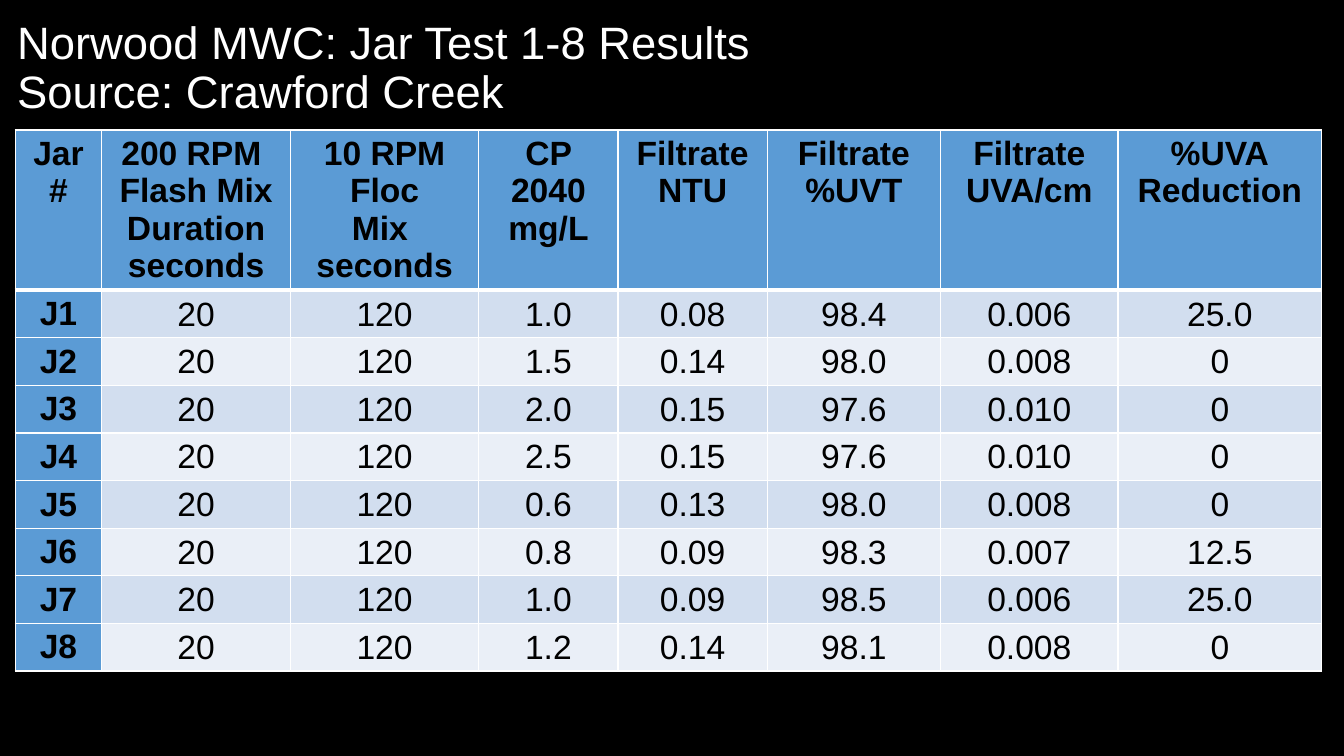
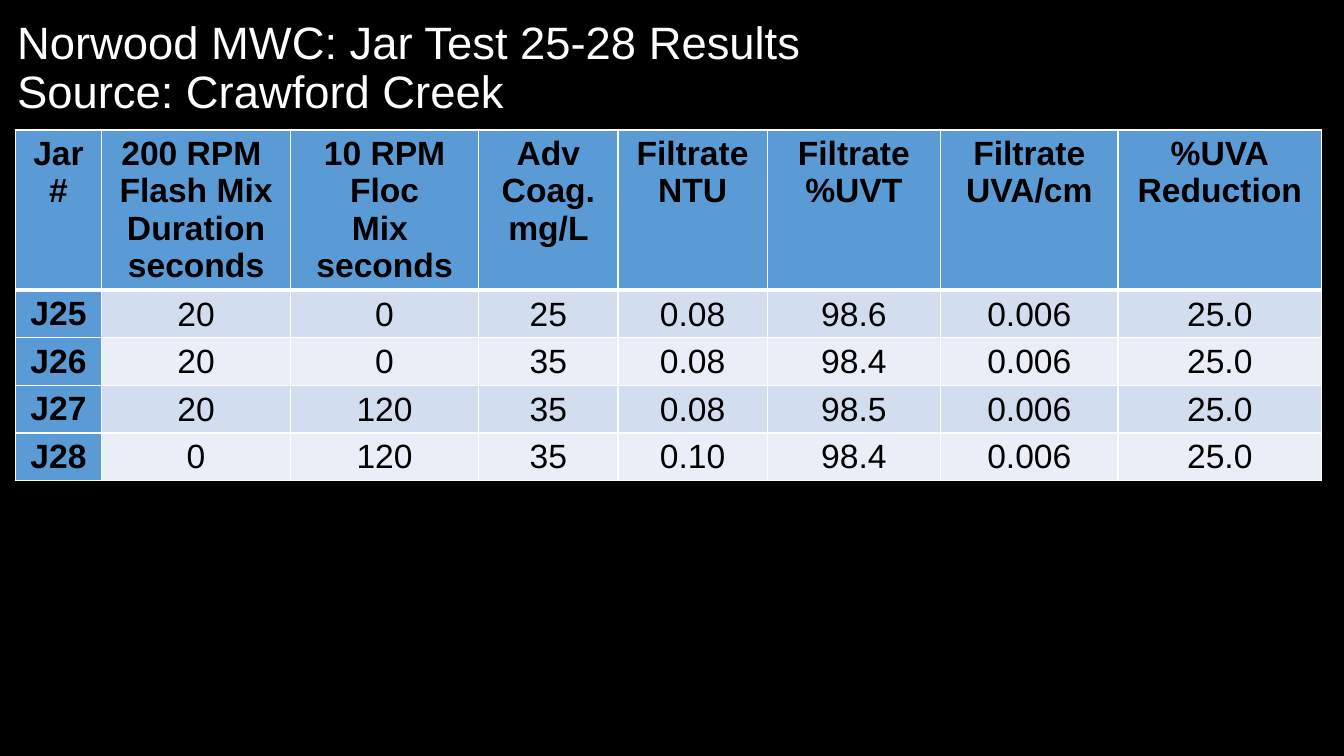
from lxml import etree
from pptx import Presentation
from pptx.dml.color import RGBColor
from pptx.enum.text import MSO_ANCHOR, MSO_AUTO_SIZE, PP_ALIGN
from pptx.oxml.ns import qn
from pptx.util import Inches, Pt

TOP, MIDDLE = MSO_ANCHOR.TOP, MSO_ANCHOR.MIDDLE
LEFT, CENTER = PP_ALIGN.LEFT, PP_ALIGN.CENTER
NO_AUTOFIT = MSO_AUTO_SIZE.NONE

FONT = "Arial"
BLACK, WHITE, BLUE = "000000", "FFFFFF", "5B9BD5"
BANDS = ("D2DEEF", "EAEFF7")
TITLE_BOX = (0.07, 0.12, 13.03, 1.14)
TABLE_AT = (0.15, 1.29)
COL_WIDTHS = (0.86, 1.87, 1.87, 1.38, 1.48, 1.72, 1.76, 2.02)
HEADER_H, ROW_H = 1.59, 0.47
LABEL_MARGINS = (0.1, 0.05, 0.1, 0.05)
VALUE_MARGINS = (0.01, 0.01, 0.01, 0)

SLIDES = [
    ("Norwood MWC: Jar Test 1-8 Results \vSource: Crawford Creek", "CP 2040\nmg/L", [
        ("J1", "20", "120", "1.0", "0.08", "98.4", "0.006", "25.0"),
        ("J2", "20", "120", "1.5", "0.14", "98.0", "0.008", "0"),
        ("J3", "20", "120", "2.0", "0.15", "97.6", "0.010", "0"),
        ("J4", "20", "120", "2.5", "0.15", "97.6", "0.010", "0"),
        ("J5", "20", "120", "0.6", "0.13", "98.0", "0.008", "0"),
        ("J6", "20", "120", "0.8", "0.09", "98.3", "0.007", "12.5"),
        ("J7", "20", "120", "1.0", "0.09", "98.5", "0.006", "25.0"),
        ("J8", "20", "120", "1.2", "0.14", "98.1", "0.008", "0"),
    ]),
    ("Norwood MWC: Jar Test 25-28 Results \vSource: Crawford Creek", "Adv\nCoag.\nmg/L", [
        ("J25", "20", "0", "25", "0.08", "98.6", "0.006", "25.0"),
        ("J26", "20", "0", "35", "0.08", "98.4", "0.006", "25.0"),
        ("J27", "20", "120", "35", "0.08", "98.5", "0.006", "25.0"),
        ("J28", "0", "120", "35", "0.10", "98.4", "0.006", "25.0"),
    ]),
]


def rgb(color):
    """Turn a hex string into a colour."""
    return RGBColor.from_string(color)


def style_font(p, size, color, bold=False):
    """Set the font of a paragraph."""
    p.font.name, p.font.size, p.font.bold = FONT, Pt(size), bold
    p.font.color.rgb = rgb(color)


def add_borders(cell, top, bottom):
    """Draw white cell borders, with the top and bottom widths in points."""
    tc_pr = cell._tc.get_or_add_tcPr()
    for side, width in (("L", 1), ("R", 1), ("T", top), ("B", bottom)):
        ln = etree.SubElement(tc_pr, qn(f"a:ln{side}"), w=str(Pt(width)))
        fill = etree.SubElement(ln, qn("a:solidFill"))
        etree.SubElement(fill, qn("a:srgbClr"), val=WHITE)


def fill_cell(cell, text, row, col):
    """Write and format one cell according to its place in the table."""
    label = row == 0 or col == 0
    add_borders(cell, 3 if row == 1 else 1, 3 if row == 0 else 1)
    cell.fill.solid()
    cell.fill.fore_color.rgb = rgb(BLUE if label else BANDS[(row - 1) % 2])
    cell.vertical_anchor = TOP if label else MIDDLE
    margins = LABEL_MARGINS if label else VALUE_MARGINS
    (cell.margin_left, cell.margin_top,
     cell.margin_right, cell.margin_bottom) = map(Inches, margins)
    cell.text = text
    for p in cell.text_frame.paragraphs:
        p.alignment = CENTER
        style_font(p, 24, BLACK, label)


def add_title(slide, text, box):
    """Place the slide title in the given box."""
    sp = slide.shapes.title
    sp.left, sp.top, sp.width, sp.height = map(Inches, box)
    tf = sp.text_frame
    tf.text = text
    tf.word_wrap, tf.auto_size, tf.vertical_anchor = True, NO_AUTOFIT, MIDDLE
    p = tf.paragraphs[0]
    p.alignment, p.line_spacing = LEFT, 0.9
    style_font(p, 32.4, WHITE)


def add_results(slide, dose, rows, left, top):
    """Add the jar test table at the given corner."""
    header = ("Jar\n#", "200 RPM \nFlash Mix\nDuration\nseconds",
              "10 RPM\nFloc\nMix \nseconds", dose, "Filtrate\nNTU",
              "Filtrate\n%UVT", "Filtrate\nUVA/cm", "%UVA\nReduction")
    heights = [HEADER_H] + [ROW_H] * len(rows)
    table = slide.shapes.add_table(
        len(heights), len(COL_WIDTHS), Inches(left), Inches(top),
        Inches(sum(COL_WIDTHS)), Inches(sum(heights))).table
    table.first_col = True
    for column, width in zip(table.columns, COL_WIDTHS):
        column.width = Inches(width)
    for i, texts in enumerate([header] + rows):
        table.rows[i].height = Inches(heights[i])
        for j, text in enumerate(texts):
            fill_cell(table.cell(i, j), text, i, j)


def main():
    """Build and save the presentation."""
    prs = Presentation()
    prs.slide_width, prs.slide_height = Inches(13.33), Inches(7.5)
    background = prs.slide_master.background.fill
    background.solid()
    background.fore_color.rgb = rgb(BLACK)
    layout = prs.slide_layouts.get_by_name("Title Only")
    for title, dose, rows in SLIDES:
        slide = prs.slides.add_slide(layout)
        add_title(slide, title, TITLE_BOX)
        add_results(slide, dose, rows, *TABLE_AT)
    prs.save("out.pptx")


if __name__ == "__main__":
    main()
